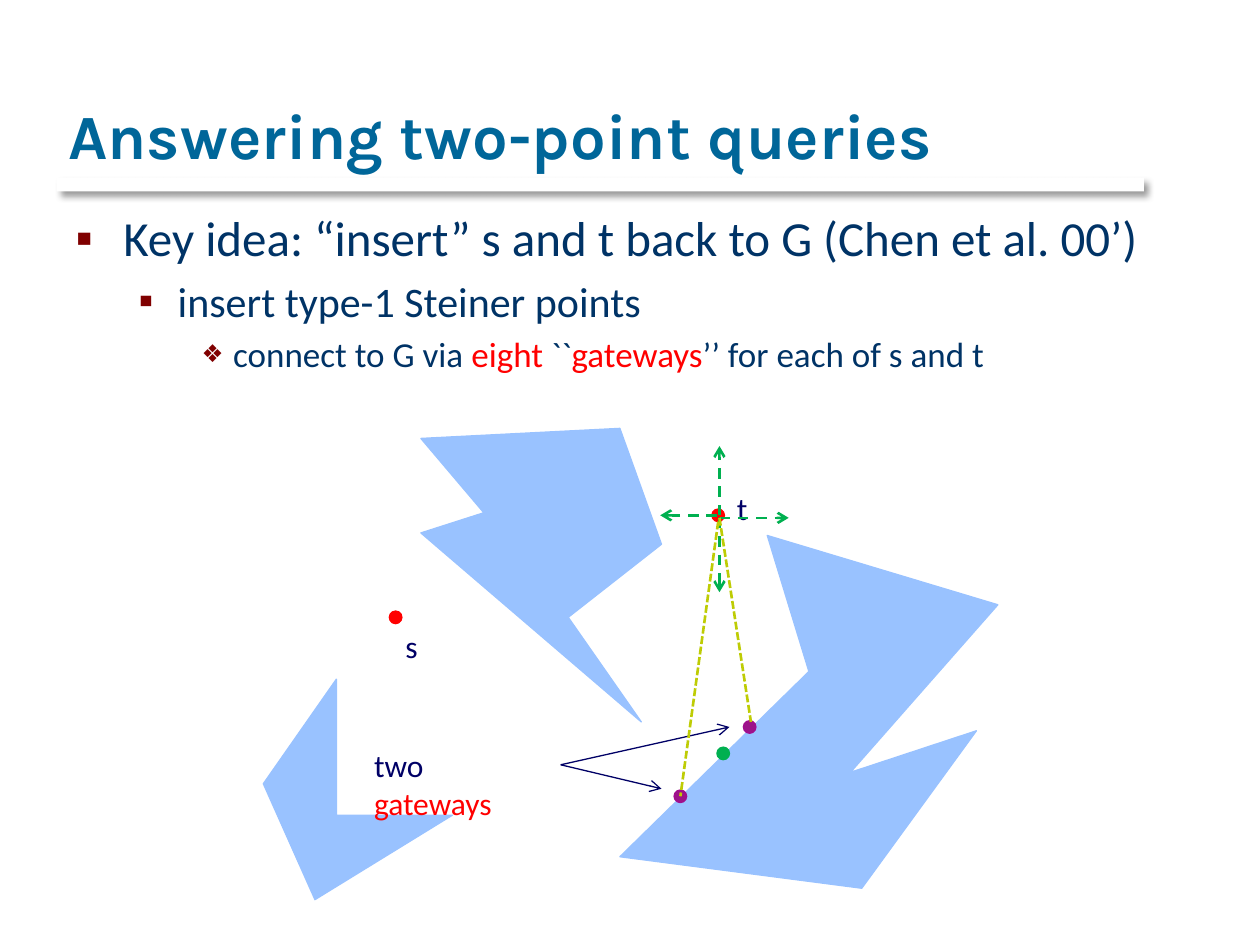
"""Build the slide on answering two-point queries with gateways."""
from lxml.etree import SubElement
from pptx import Presentation
from pptx.dml.color import RGBColor
from pptx.enum.dml import MSO_LINE
from pptx.enum.shapes import MSO_CONNECTOR, MSO_SHAPE
from pptx.enum.text import MSO_ANCHOR, MSO_AUTO_SIZE, PP_ALIGN
from pptx.oxml.ns import qn
from pptx.util import Inches, Pt

COLORS = {
    "title": "006699", "body": "003366", "bullet": "800000", "label": "000066",
    "red": "FF0000", "green": "00B050", "obstacle": "99C2FF",
    "gateway": "9C1489", "gateway_line": "A30D8E", "path": "BECC04",
    "white": "FFFFFF", "shadow": "000000",
}


def color(name):
    return RGBColor.from_string(COLORS[name])


def add_runs(paragraph, runs, size):
    for text, color_name in runs:
        run = paragraph.add_run()
        run.text = text
        run.font.name = "Calibri"
        run.font.size = Pt(size)
        run.font.color.rgb = color(color_name)


presentation = Presentation()
presentation.slide_width, presentation.slide_height = Inches(10), Inches(7.5)
slide = presentation.slides.add_slide(presentation.slide_layouts[1])
shapes = slide.shapes

title = shapes.title
title.left, title.top, title.width, title.height = map(Inches, (0.44, 0.17, 8.5, 1.25))
title.text_frame.text = "Answering two-point queries"
title.text_frame.auto_size = MSO_AUTO_SIZE.NONE
title.text_frame.vertical_anchor = MSO_ANCHOR.BOTTOM
title_paragraph = title.text_frame.paragraphs[0]
title_paragraph.alignment = PP_ALIGN.LEFT
title_run = title_paragraph.runs[0]
title_run.font.name, title_run.font.size, title_run.font.bold = "Karla", Pt(36), True
title_run.font.color.rgb = color("title")
title_run.font._element.set("spc", "10")

rule = shapes.add_shape(MSO_SHAPE.RECTANGLE, *map(Inches, (0.45, 1.41, 8.63, 0.11)))
rule.fill.solid()
rule.fill.fore_color.rgb = color("white")
rule.line.fill.background()
rule.shadow.inherit = False
effects = rule._element.spPr.find(qn("a:effectLst"))
shadow = SubElement(effects, qn("a:outerShdw"), blurRad=str(Pt(4)), dist=str(Pt(3)),
                    dir="2700000", algn="tl", rotWithShape="0")
shadow_color = SubElement(shadow, qn("a:srgbClr"), val=COLORS["shadow"])
SubElement(shadow_color, qn("a:alpha"), val="40000")

body = slide.placeholders[1]
body.left, body.top, body.width, body.height = map(Inches, (0.5, 1.6, 8.94, 5.03))
body.text_frame.auto_size = MSO_AUTO_SIZE.NONE
bullets = [
    (28, 0.38, 0.38, "▪", 100,
     [("Key idea: “insert” s and t back to G (Chen et al. 00’)", "body")]),
    (24, 0.81, 0.31, "▪", 100, [("insert type-1 Steiner points", "body")]),
    (20, 1.25, 0.25, "❖", 70,
     [("connect to G via ", "body"), ("eight", "red"), (" ``", "body"),
      ("gateways", "red"), ("’’ for each of s and t", "body")]),
]
for level, (size, margin, hanging, mark, mark_size, runs) in enumerate(bullets):
    paragraph = body.text_frame.paragraphs[0] if level == 0 else body.text_frame.add_paragraph()
    paragraph.level = level
    add_runs(paragraph, runs, size)
    properties = paragraph._p.get_or_add_pPr()
    properties.set("marL", str(Inches(margin)))
    properties.set("indent", str(-Inches(hanging)))
    bullet_color = SubElement(properties, qn("a:buClr"))
    SubElement(bullet_color, qn("a:srgbClr"), val=COLORS["bullet"])
    SubElement(properties, qn("a:buSzPct"), val=str(mark_size * 1000))
    SubElement(properties, qn("a:buChar"), char=mark)

obstacles = [
    [(6.09, 4.25), (6.42, 5.33), (4.92, 6.8), (6.84, 7.05), (7.75, 5.8), (6.75, 6.13),
     (7.92, 4.8)],
    [(4.92, 3.4), (3.34, 3.48), (3.84, 4.07), (3.34, 4.23), (5.09, 5.73), (4.51, 4.9),
     (5.25, 4.32)],
    [(2.67, 5.39), (2.09, 6.22), (2.5, 7.14), (3.59, 6.47), (2.67, 6.47)],
]
for corners in obstacles:
    points = [(Inches(x), Inches(y)) for x, y in corners]
    builder = shapes.build_freeform(*points[0])
    builder.add_line_segments(points[1:], close=True)
    obstacle = builder.convert_to_shape()
    obstacle.shadow.inherit = False
    obstacle.fill.solid()
    obstacle.fill.fore_color.rgb = color("obstacle")
    obstacle.line.color.rgb = color("obstacle")
    obstacle.line.width = Pt(0.75)

dots = [
    (3.09, 4.85, "red", "red"), (5.65, 4.04, "red", "red"),
    (5.69, 5.93, "green", "green"),
    (5.35, 6.27, "gateway", "gateway_line"), (5.9, 5.72, "gateway", "gateway_line"),
]
for left, top, fill_name, line_name in dots:
    dot = shapes.add_shape(MSO_SHAPE.OVAL, *map(Inches, (left, top, 0.1, 0.1)))
    dot.shadow.inherit = False
    dot.fill.solid()
    dot.fill.fore_color.rgb = color(fill_name)
    dot.line.color.rgb = color(line_name)
    dot.line.width = Pt(0.75)

labels = [
    (3.12, 4.93, 0.3, False, [("s", "label")]),
    (5.75, 3.83, 0.29, False, [("t", "label")]),
    (2.87, 5.87, 1.55, True, [("two ", "label"), ("gateways", "red")]),
]
for left, top, width, wrap, runs in labels:
    label = shapes.add_textbox(*map(Inches, (left, top, width, 0.4)))
    label.text_frame.word_wrap = wrap
    add_runs(label.text_frame.paragraphs[0], runs, 18)

lines = [
    (5.69, 4.09, 5.24, 4.09, "green", 1.5, MSO_LINE.DASH, True),
    (5.71, 4.11, 5.71, 4.7, "green", 1.5, MSO_LINE.DASH, True),
    (5.71, 4.11, 6.26, 4.11, "green", 1.5, MSO_LINE.DASH, True),
    (5.71, 4.09, 5.71, 3.54, "green", 1.5, MSO_LINE.DASH, True),
    (4.45, 6.07, 5.79, 5.77, "label", 0.75, MSO_LINE.SOLID, True),
    (4.45, 6.07, 5.25, 6.26, "label", 0.75, MSO_LINE.SOLID, True),
    (5.71, 4.11, 5.96, 5.73, "path", 1.5, MSO_LINE.SQUARE_DOT, False),
    (5.7, 4.14, 5.4, 6.32, "path", 1.5, MSO_LINE.SQUARE_DOT, False),
]
for *ends, color_name, width, dash, has_arrow in lines:
    connector = shapes.add_connector(MSO_CONNECTOR.STRAIGHT, *map(Inches, ends))
    connector.line.color.rgb = color(color_name)
    connector.line.width = Pt(width)
    connector.line.dash_style = dash
    if has_arrow:
        SubElement(connector.line._get_or_add_ln(), qn("a:tailEnd"), type="arrow")
    SubElement(connector._element.spPr, qn("a:effectLst"))

presentation.save("out.pptx")
